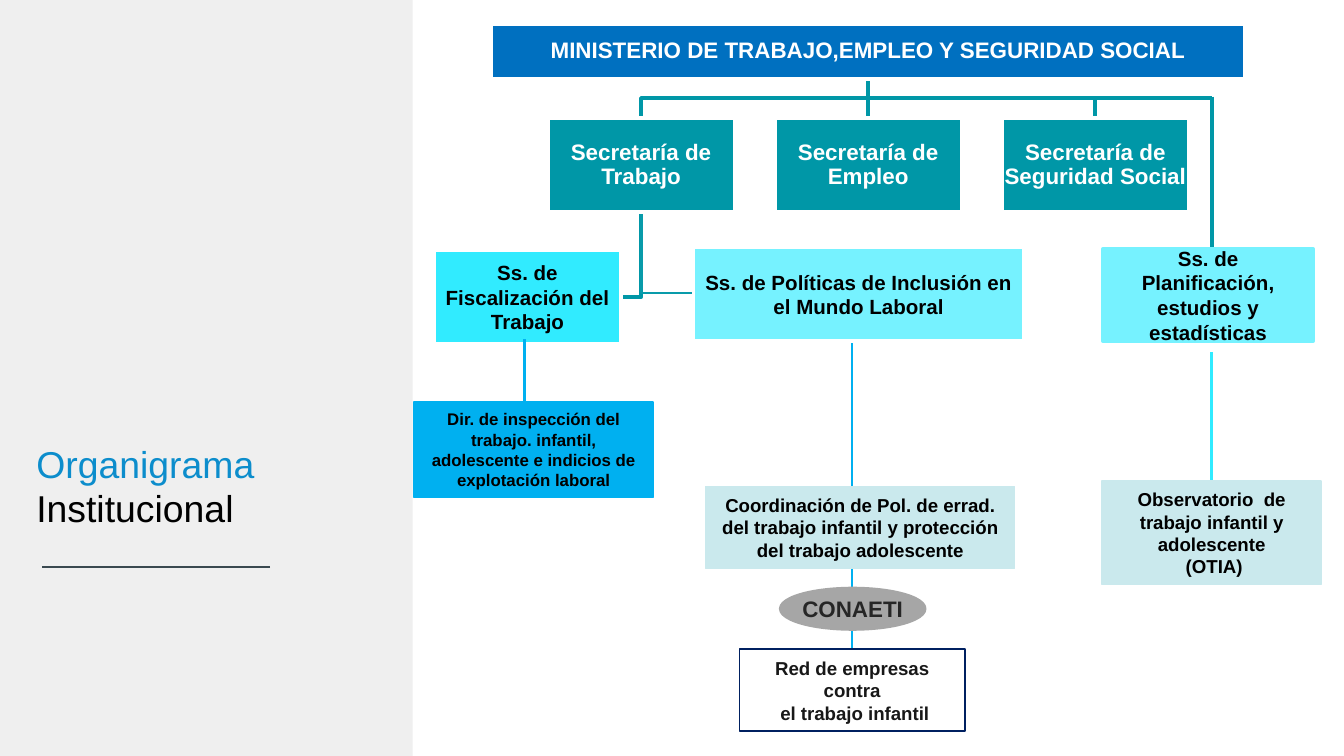
from lxml import etree
from pptx import Presentation
from pptx import util as u
from pptx.dml.color import RGBColor
from pptx.enum import shapes, text
from pptx.oxml.ns import qn

COLORS = {
    "white": "FFFFFF", "black": "000000", "panel": "EFEFEF", "rule": "3A4950",
    "title": "0C8DCC", "blue": "0070C0", "teal": "0097A7", "link": "099BAA",
    "aqua": "76F2FF", "cyan": "31EBFF", "sky": "00B0F0", "pale": "CAE9ED",
    "gray": "A6A6A6", "navy": "002060", "dark": "262626", "ink": "181818",
}
RGB = {name: RGBColor.from_string(value) for name, value in COLORS.items()}

prs = Presentation()
prs.slide_width = u.Inches(10)
prs.slide_height = prs.slide_width * 9 // 16
cell = prs.slide_width / 100
s = prs.slides.add_slide(prs.slide_layouts[5])


def grid(*lengths):
    return [round(n * cell) for n in lengths]


def add_box(kind, at, fill, line, width, content="", size=10, color="black", inset=(1, 0.5)):
    sp = s.shapes.add_shape(kind, *grid(*at))
    sp.shadow.inherit = False
    if fill:
        sp.fill.solid()
        sp.fill.fore_color.rgb = RGB[fill]
    else:
        sp.fill.background()
    if line:
        sp.line.color.rgb = RGB[line]
        sp.line.width = u.Pt(width)
    else:
        sp.line.fill.background()
    tf = sp.text_frame
    tf.word_wrap = True
    tf.vertical_anchor = text.MSO_ANCHOR.MIDDLE
    tf.margin_left = tf.margin_right = grid(inset[0])[0]
    tf.margin_top = tf.margin_bottom = grid(inset[1])[0]
    tf.text = content
    for p in tf.paragraphs:
        p.alignment = text.PP_ALIGN.CENTER
        if color == "white":
            p.line_spacing = 0.9
        for r in p.runs:
            r.font.name, r.font.size, r.font.bold = "Arial", u.Pt(size), True
            r.font.color.rgb = RGB[color]
    return sp


def add_line(start, end, color, width):
    cx = s.shapes.add_connector(shapes.MSO_CONNECTOR.STRAIGHT, *grid(*start, *end))
    cx.line.color.rgb = RGB[color]
    cx.line.width = u.Pt(width)
    etree.SubElement(cx._element.spPr, qn("a:effectLst"))
    return cx


RECT, OVAL = shapes.MSO_SHAPE.RECTANGLE, shapes.MSO_SHAPE.OVAL
panel = add_box(RECT, (0, 0, 30.7, 56.25), "panel", None, 0)
title = s.shapes.title
title._element.addprevious(panel._element)
title.left, title.top, title.width, title.height = grid(1.7, 32.3, 28, 7.7)
tf = title.text_frame
tf.text = "Organigrama\nInstitucional"
tf.word_wrap = True
tf.auto_size = text.MSO_AUTO_SIZE.NONE
tf.vertical_anchor = text.MSO_ANCHOR.TOP
for p, color in zip(tf.paragraphs, ("title", "black")):
    p.alignment = text.PP_ALIGN.LEFT
    r = p.runs[0]
    r.font.name, r.font.size = "Arial", u.Pt(20)
    r.font.color.rgb = RGB[color]
add_line((20.1, 42.2), (3.1, 42.2), "rule", 0.75)

left, middle, right = (47.7 + 16.9 * i for i in range(3))
bus = 7.3
elbows = [
    ([(middle, 5.9), (middle, bus), (right, bus), (right, 8.8)], "teal", 2),
    ([(middle, 5.9), (middle, bus), (left, bus), (left, 8.8)], "teal", 2),
    ([(left, 15.8), (left, 22.1), (46.2, 22.1)], "teal", 2.25),
    ([(left, 15.8), (left, 21.8), (51.6, 21.8)], "link", 1.5),
]
for points, color, width in elbows:
    first, *rest = [grid(*point) for point in points]
    builder = s.shapes.build_freeform(*first)
    builder.add_line_segments(rest, close=False)
    sp = builder.convert_to_shape()
    sp.shadow.inherit = False
    sp.fill.background()
    sp.line.color.rgb = RGB[color]
    sp.line.width = u.Pt(width)

stem = add_line((middle, 5.9), (middle, 8.8), "teal", 2)
observatory_link = add_line((90.15, 26.2), (90.15, 35.8), "cyan", 1.5)
network_link = add_line((63.4, 25.4), (63.4, 48.3), "sky", 1.5)

tight = (0.1, 0.1)
ministry = add_box(RECT, (middle - 28.05, 1.8, 56.1, 4.1), "blue", "white", 2,
                   "MINISTERIO DE TRABAJO,EMPLEO Y SEGURIDAD SOCIAL", 12, "white", tight)
secretariats = [
    add_box(RECT, (x - 6.95, 8.8, 13.9, 7), "teal", "white", 2,
            "Secretaría de " + area, 12, "white", tight)
    for x, area in zip((left, middle, right), ("Trabajo", "Empleo", "Seguridad Social"))
]
add_box(RECT, (51.6, 18.4, 24.6, 7), "aqua", "white", 2,
        "Ss. de Políticas de Inclusión en el Mundo Laboral", 11, inset=tight)
add_box(RECT, (32.3, 18.6, 13.9, 7), "cyan", "white", 2,
        "Ss. de Fiscalización del Trabajo", 11, inset=tight)

add_line((81, bus), (90.2, bus), "teal", 2)
add_line((90.2, 7.2), (90.2, 22.5), "teal", 2)
add_line((39, 33.9), (39, 25.2), "sky", 1.5)

add_box(RECT, (82.1, 18.5, 15.6, 6.9), "aqua", "aqua", 2,
        "Ss. de Planificación, estudios y estadísticas", 11)
observatory = add_box(RECT, (82, 35.8, 16.3, 7.7), "pale", "pale", 0.75,
                      "Observatorio  de trabajo infantil y adolescente\n (OTIA)")
add_box(RECT, (52.5, 36.2, 23, 6.1), "pale", "pale", 0.75,
        "Coordinación de Pol. de errad. del trabajo infantil y protección del trabajo adolescente")
add_box(RECT, (30.8, 29.9, 17.8, 7.1), "sky", "sky", 0.75,
        "Dir. de inspección del trabajo. infantil, adolescente e indicios de explotación laboral", 9)
add_box(OVAL, (58.1, 43.8, 10.7, 3), "gray", "gray", 2, "CONAETI", 12, "dark", (0, 0))
network = add_box(RECT, (55, 48.3, 16.8, 6.1), None, "navy", 0.75,
                  "Red de empresas contra\n el trabajo infantil", 10, "ink")

stem.begin_connect(ministry, 2)
stem.end_connect(secretariats[1], 0)
observatory_link.end_connect(observatory, 0)
network_link.end_connect(network, 0)

prs.save("out.pptx")
